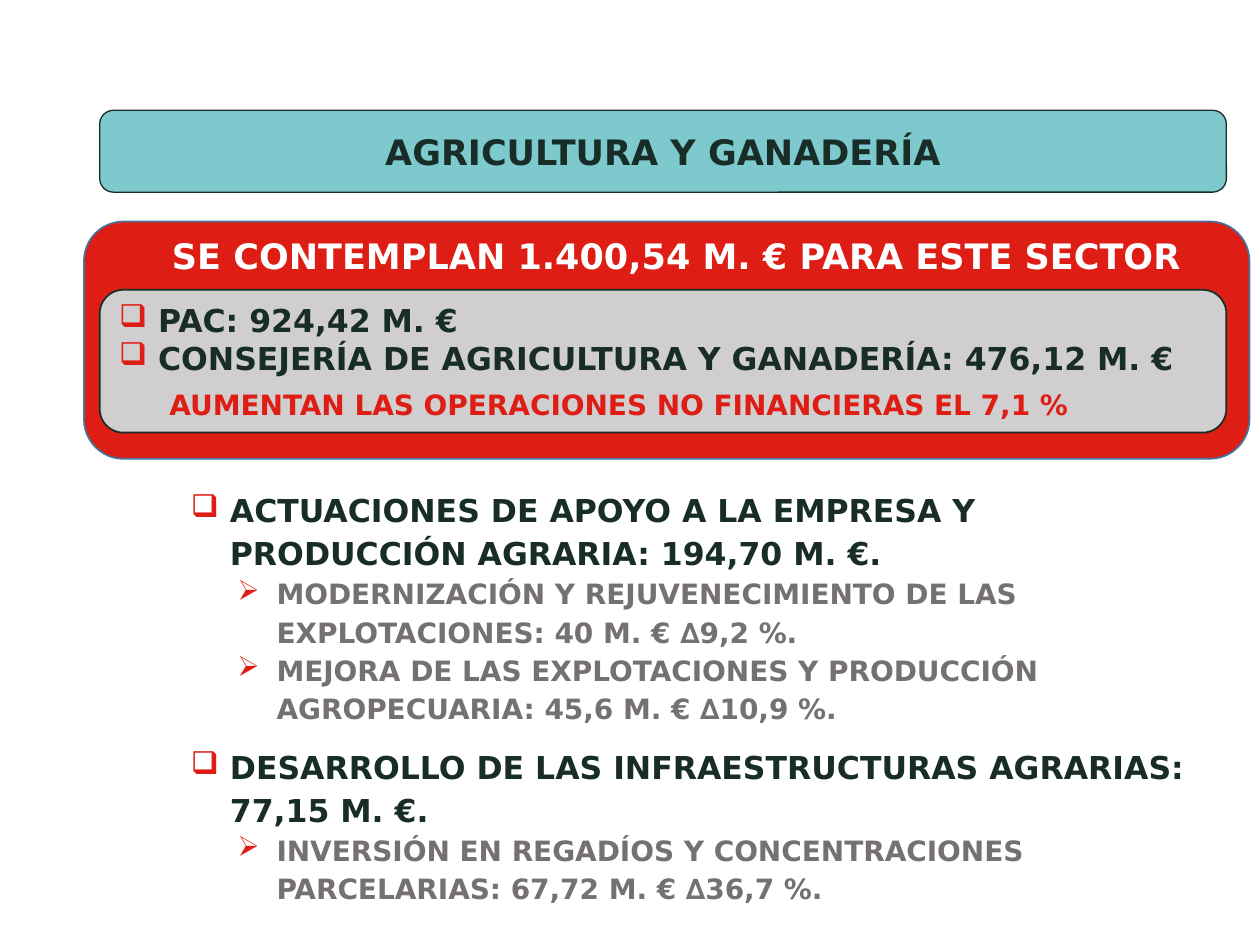
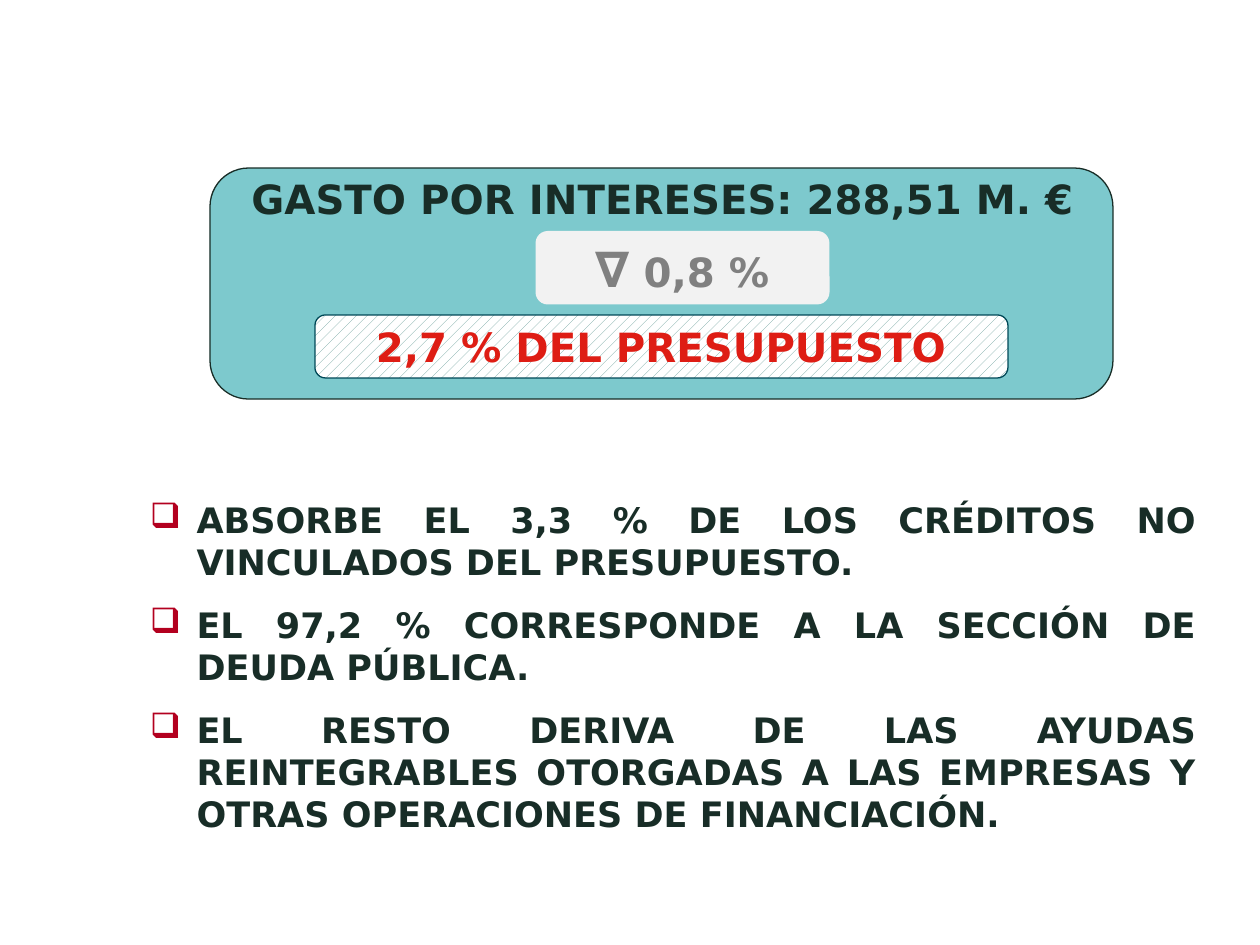
from lxml.etree import SubElement
from pptx import Presentation
from pptx.dml.color import RGBColor
from pptx.enum.dml import MSO_PATTERN
from pptx.enum.shapes import MSO_SHAPE
from pptx.enum.text import MSO_ANCHOR, MSO_AUTO_SIZE, PP_ALIGN
from pptx.oxml.ns import qn
from pptx.util import Inches, Pt

# Shared look
FONT = "DejaVu Sans"
DARK = RGBColor(0x18, 0x2D, 0x27)
RED = RGBColor(0xDE, 0x1D, 0x14)
WINE = RGBColor(0xB3, 0x00, 0x1F)
TEAL = RGBColor(0x7D, 0xC9, 0xCD)
BLUE = RGBColor(0x43, 0x73, 0x9E)
NAVY = RGBColor(0x00, 0x48, 0x57)
SAGE = RGBColor(0x6B, 0x9F, 0x9B)
STONE = RGBColor(0x76, 0x71, 0x71)
GREY = RGBColor(0x80, 0x80, 0x80)
SILVER = RGBColor(0xD0, 0xCE, 0xCE)
PALE = RGBColor(0xF2, 0xF2, 0xF2)
WHITE = RGBColor(0xFF, 0xFF, 0xFF)
SQUARE, ARROW = "❑", "➢"

deck = Presentation()
deck.slide_width, deck.slide_height = Inches(10), Inches(7.5)
CELL = deck.slide_width / 120  # grid of 120 columns by 90 rows


def panel(slide, place, fill=None, edge=None, width=0.75):
    """Place a rounded panel, or a plain text box when there is no fill."""
    spot = [round(n * CELL) for n in place]
    if fill is None:
        return slide.shapes.add_textbox(*spot)
    shape = slide.shapes.add_shape(MSO_SHAPE.ROUNDED_RECTANGLE, *spot)
    shape.shadow.inherit = False
    shape.fill.solid()
    shape.fill.fore_color.rgb = fill
    if edge is None:
        shape.line.fill.background()
    else:
        shape.line.color.rgb = edge
        shape.line.width = Pt(width)
    return shape


def write(shape, rows, align=PP_ALIGN.LEFT, wrap=True, tint=RED):
    """Fill a shape with rows of (text, size, colour, bullet, indent, hang)."""
    frame = shape.text_frame
    frame.word_wrap = wrap
    for i, (text, size, color, mark, left, hang) in enumerate(rows):
        par = frame.paragraphs[0] if i == 0 else frame.add_paragraph()
        par.text = text
        par.alignment = align
        props = par._p.get_or_add_pPr()
        props.set("marL", str(Inches(left)))
        props.set("indent", str(Inches(-hang)))
        if mark:
            shade = SubElement(props, qn("a:buClr"))
            SubElement(shade, qn("a:srgbClr"), val=str(tint))
            SubElement(props, qn("a:buChar"), char=mark)
        font = par.runs[0].font
        font.name, font.size, font.bold = FONT, Pt(size), True
        font.color.rgb = color
    return frame


# Slide 1: farming
farm = deck.slides.add_slide(deck.slide_layouts[6])
panel(farm, (8, 21.1, 111, 22.6), RED, BLUE, 1)

head = panel(farm, (9.5, 10.5, 107.3, 7.8), TEAL, DARK)
frame = write(head, [("AGRICULTURA Y GANADERÍA", 20, DARK, None, 0, 0)],
              PP_ALIGN.CENTER, False)
frame.vertical_anchor = MSO_ANCHOR.MIDDLE

total = panel(farm, (15.2, 21.7, 99.4, 5.3))
frame = write(total, [("SE CONTEMPLAN 1.400,54 M. € PARA ESTE SECTOR",
                       20, WHITE, None, 0, 0)], wrap=False)
frame.auto_size = MSO_AUTO_SIZE.SHAPE_TO_FIT_TEXT

# Split of the total
main = (18, DARK, SQUARE, 0.31, 0.31)
split = panel(farm, (9.5, 27.6, 107.3, 13.6), SILVER, DARK, 1)
frame = write(split, [
    ("PAC: 924,42 M. €", *main),
    ("CONSEJERÍA DE AGRICULTURA Y GANADERÍA: 476,12 M. €", *main),
    ("AUMENTAN LAS OPERACIONES NO FINANCIERAS EL 7,1 %", 16, RED, None, 0.4, 0),
])
frame.vertical_anchor = MSO_ANCHOR.MIDDLE
frame.paragraphs[2].space_before = Pt(6)

# Lines of action
sub = (16, STONE, ARROW, 0.68, 0.31)
plans = panel(farm, (17, 45.7, 99.7, 41.2))
frame = write(plans, [
    ("ACTUACIONES DE APOYO A LA EMPRESA Y PRODUCCIÓN AGRARIA: 194,70 M. €.", *main),
    ("MODERNIZACIÓN Y REJUVENECIMIENTO DE LAS EXPLOTACIONES: 40 M. € ∆9,2 %.", *sub),
    ("MEJORA DE LAS EXPLOTACIONES Y PRODUCCIÓN AGROPECUARIA: 45,6 M. € ∆10,9 %.", *sub),
    ("DESARROLLO DE LAS INFRAESTRUCTURAS AGRARIAS: 77,15 M. €.", *main),
    ("INVERSIÓN EN REGADÍOS Y CONCENTRACIONES PARCELARIAS: 67,72 M. € ∆36,7 %.", *sub),
])
frame.auto_size = MSO_AUTO_SIZE.SHAPE_TO_FIT_TEXT
for par in frame.paragraphs:
    par.line_spacing = 1.14
frame.paragraphs[2].space_after = Pt(10)

# Slide 2: interest
debt = deck.slides.add_slide(deck.slide_layouts[6])
panel(debt, (20, 16, 86, 22), TEAL, DARK)

# Notes below the panel
point = (20, DARK, SQUARE, 0.37, 0.37)
notes = panel(debt, (13.1, 46.9, 102, 36.4))
frame = write(notes, [
    ("ABSORBE EL 3,3 % DE LOS CRÉDITOS NO VINCULADOS DEL PRESUPUESTO.", *point),
    ("EL 97,2 % CORRESPONDE A LA SECCIÓN DE DEUDA PÚBLICA.", *point),
    ("EL RESTO DERIVA DE LAS AYUDAS REINTEGRABLES OTORGADAS A LAS EMPRESAS Y "
     "OTRAS OPERACIONES DE FINANCIACIÓN.", *point),
], PP_ALIGN.JUSTIFY, tint=WINE)
for par in frame.paragraphs[1:]:
    par.space_before = Pt(12)

# Figures inside the panel
cost = panel(debt, (20.3, 16, 85.7, 5.9))
frame = write(cost, [("GASTO POR INTERESES: 288,51 M. €", 23, DARK, None, 0, 0)],
              PP_ALIGN.CENTER)
frame.auto_size = MSO_AUTO_SIZE.SHAPE_TO_FIT_TEXT

share = panel(debt, (30, 30, 66, 6), WHITE, NAVY)
share.fill.patterned()
share.fill.pattern = MSO_PATTERN.PERCENT_20
share.fill.fore_color.rgb = SAGE
share.fill.back_color.rgb = WHITE
drop = panel(debt, (51, 22, 28, 7), PALE)
for shape, text, size, color in ((share, "2,7 % DEL PRESUPUESTO", 23, RED),
                                 (drop, "∇", 28, GREY)):
    frame = write(shape, [(text, size, color, None, 0, 0)], PP_ALIGN.CENTER, False)
    frame.vertical_anchor = MSO_ANCHOR.MIDDLE

rate = drop.text_frame.paragraphs[0].add_run()
rate.text = " 0,8 %"
rate.font.name, rate.font.size, rate.font.bold = FONT, Pt(23), True
rate.font.color.rgb = GREY

deck.save("out.pptx")
